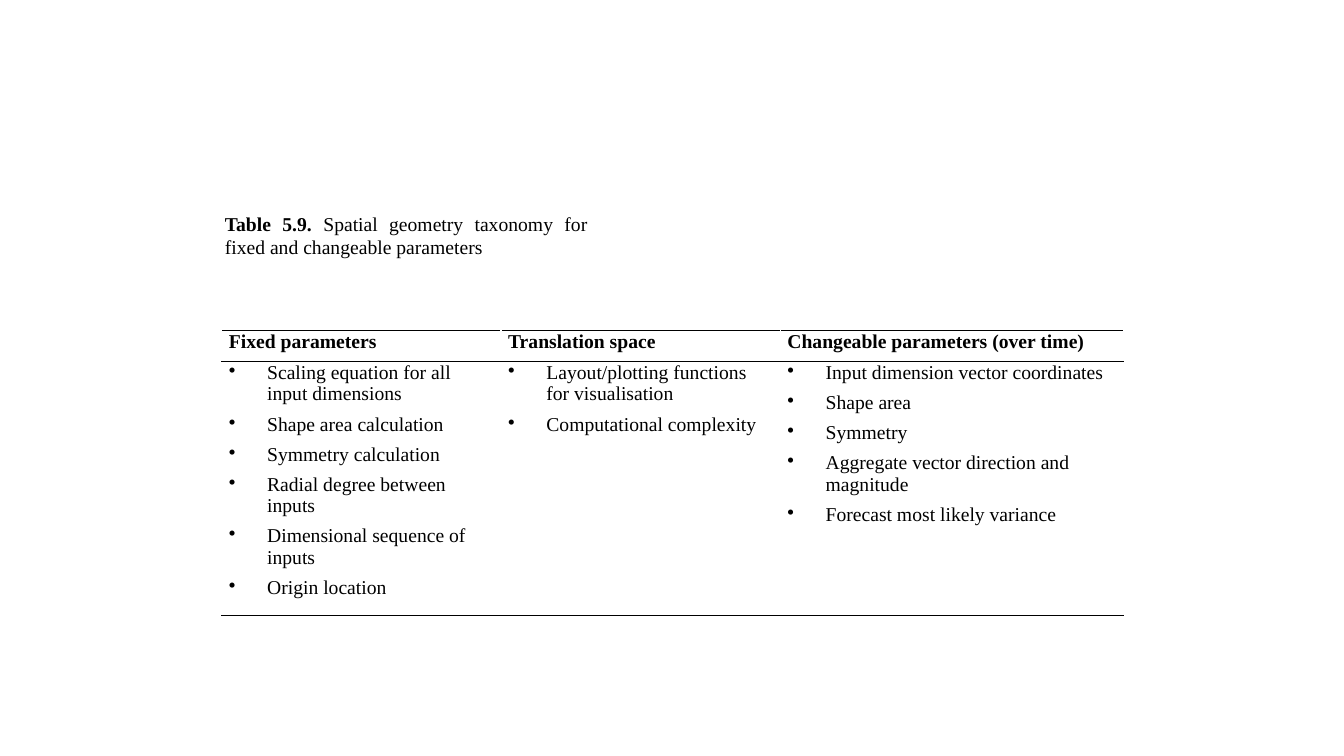
import pptx
import pptx.util
import pptx.dml.color
import pptx.enum.text
import pptx.oxml
import pptx.oxml.ns
from pptx.util import Inches

FONT = "Times New Roman"
COLORS = {"ink": "000000", "paper": "FFFFFF"}
COLUMN_WIDTHS = [2.77, 2.77, 3.4]
ROW_HEIGHTS = [0.31, 2.21]
TAXONOMY = {
    "Fixed parameters": [
        "Scaling equation for all input dimensions",
        "Shape area calculation",
        "Symmetry calculation",
        "Radial degree between inputs",
        "Dimensional sequence of inputs",
        "Origin location",
    ],
    "Translation space": [
        "Layout/plotting functions for visualisation",
        "Computational complexity",
    ],
    "Changeable parameters (over time)": [
        "Input dimension vector coordinates",
        "Shape area",
        "Symmetry",
        "Aggregate vector direction and magnitude",
        "Forecast most likely variance",
    ],
}


def set_font(font, bold=None):
    font.name = FONT
    font.size = pptx.util.Pt(14)
    font.bold = bold
    font.color.rgb = pptx.dml.color.RGBColor.from_string(COLORS["ink"])


def add_bullet(paragraph):
    properties = paragraph._p.get_or_add_pPr()
    properties.set("marL", str(Inches(0.38)))
    properties.set("indent", str(Inches(-0.38)))
    bullet = pptx.oxml.parse_xml(
        f'<a:buChar {pptx.oxml.ns.nsdecls("a")} char="•"/>')
    properties.insert_element_before(bullet, "a:tabLst", "a:defRPr", "a:extLst")


def set_borders(cell, edges):
    """Edges maps L, R, T, B, in that order, to a colour name."""
    properties = cell._tc.get_or_add_tcPr()
    for position, (edge, color) in enumerate(edges.items()):
        border = pptx.oxml.parse_xml(
            f'<a:ln{edge} {pptx.oxml.ns.nsdecls("a")} w="{pptx.util.Pt(1)}">'
            f'<a:solidFill><a:srgbClr val="{COLORS[color]}"/></a:solidFill>'
            f'</a:ln{edge}>')
        properties.insert(position, border)


def fill_cell(cell, lines, header):
    cell.margin_left = cell.margin_right = Inches(0.07)
    cell.margin_top = cell.margin_bottom = 0
    cell.fill.background()
    cell.text = "\n".join(lines)
    for paragraph in cell.text_frame.paragraphs:
        paragraph.space_before = paragraph.space_after = pptx.util.Pt(3)
        set_font(paragraph.font, bold=header)
        if not header:
            add_bullet(paragraph)
    set_borders(cell, {"L": "paper", "R": "paper", "T": "ink", "B": "ink"})


def add_taxonomy(slide):
    table = slide.shapes.add_table(
        len(ROW_HEIGHTS), len(COLUMN_WIDTHS), Inches(2.2), Inches(3.28),
        Inches(sum(COLUMN_WIDTHS)), Inches(sum(ROW_HEIGHTS))).table
    table.first_row = table.horz_banding = False
    for row, height in zip(table.rows, ROW_HEIGHTS):
        row.height = Inches(height)
    for index, (heading, parameters) in enumerate(TAXONOMY.items()):
        table.columns[index].width = Inches(COLUMN_WIDTHS[index])
        fill_cell(table.cell(0, index), [heading], header=True)
        fill_cell(table.cell(1, index), parameters, header=False)


def add_caption(slide):
    caption = slide.shapes.title
    caption.left, caption.top = Inches(2.13), Inches(2.05)
    caption.width, caption.height = Inches(3.8), Inches(0.57)
    frame = caption.text_frame
    frame.word_wrap = True
    frame.auto_size = pptx.enum.text.MSO_AUTO_SIZE.SHAPE_TO_FIT_TEXT
    frame.vertical_anchor = pptx.enum.text.MSO_ANCHOR.MIDDLE
    paragraph = frame.paragraphs[0]
    paragraph.alignment = pptx.enum.text.PP_ALIGN.JUSTIFY
    set_font(paragraph.font)
    label = paragraph.add_run()
    label.text = "Table 5.9. "
    label.font.bold = True
    description = paragraph.add_run()
    description.text = "Spatial geometry taxonomy for fixed and changeable parameters"


def main():
    deck = pptx.Presentation()
    deck.slide_width, deck.slide_height = Inches(13.33), Inches(7.5)
    # Title Only layout
    slide = deck.slides.add_slide(deck.slide_layouts[5])
    # Parameter table, then its caption
    add_taxonomy(slide)
    add_caption(slide)
    deck.save("out.pptx")


if __name__ == "__main__":
    main()
